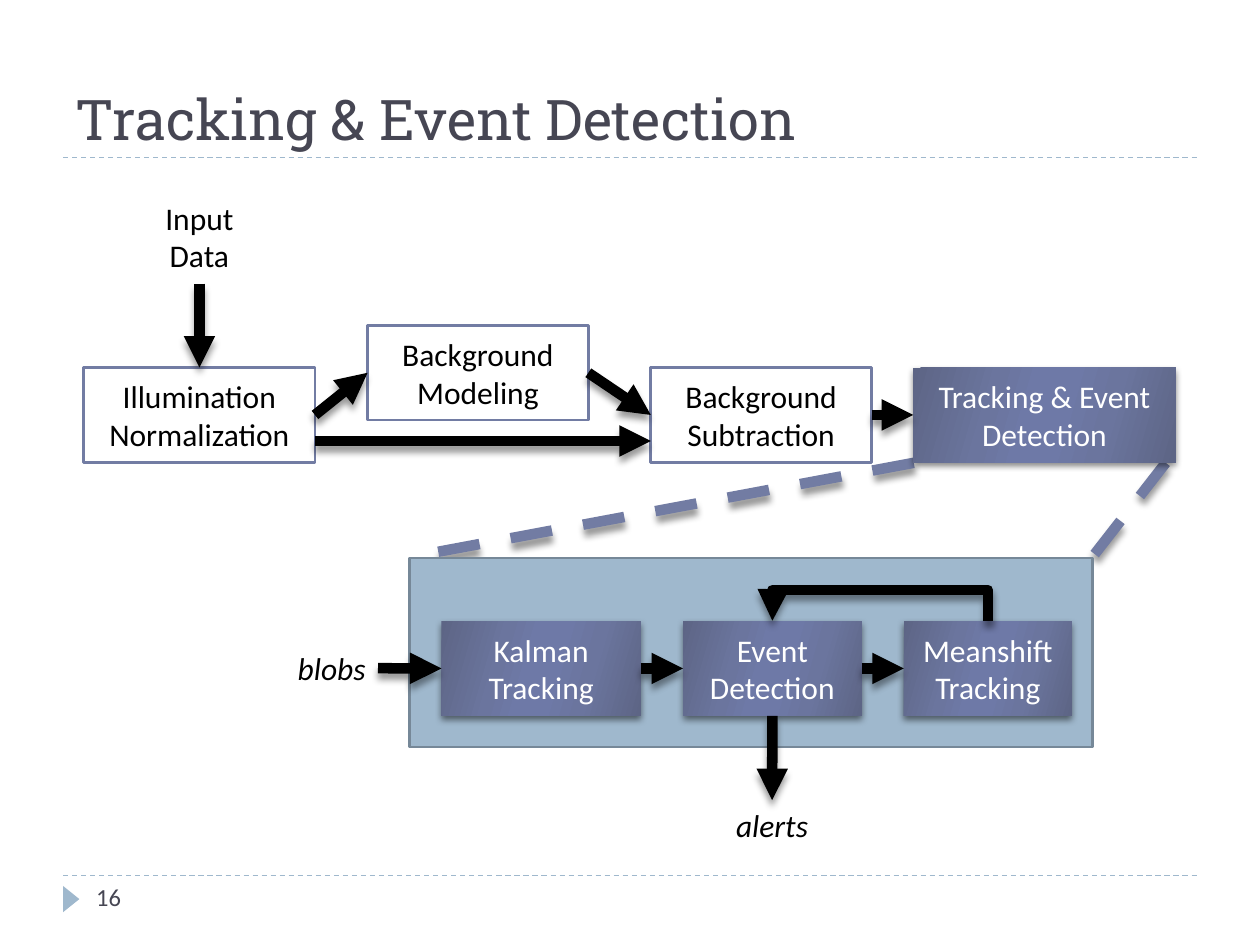
from lxml import etree
from pptx import Presentation
from pptx import util as u
from pptx.dml.color import RGBColor
from pptx.enum import dml, shapes, text
from pptx.oxml.ns import qn

BLACK = RGBColor(0x00, 0x00, 0x00)
WHITE = RGBColor(0xFF, 0xFF, 0xFF)
INK = RGBColor(0x46, 0x46, 0x53)
INDIGO = RGBColor(0x72, 0x7C, 0xA3)
PALE = RGBColor(0x9F, 0xB8, 0xCD)
PALE_EDGE = RGBColor(0x76, 0x88, 0x98)
EDGE = RGBColor(0x5D, 0x65, 0x85)
MID = RGBColor(0x6B, 0x75, 0x9E)
CORE = RGBColor(0x6E, 0x79, 0xA7)
GRADIENT = [(0, EDGE), (30, MID), (45, CORE), (55, CORE), (73, MID), (100, EDGE)]
BODY, HEADING = "Calibri", "Roboto Slab"
BOX_H, GAP = 1.91, 0.85
TOP, LEFT, BOTTOM, RIGHT = range(4)


def add_xml(parent, tag, **attrs):
    """Append a DrawingML child element with the given attributes."""
    return etree.SubElement(parent, qn(tag), {k: str(v) for k, v in attrs.items()})


def add_shadow(effects, alpha, dist):
    """Put a soft downward black shadow in an effect list."""
    shadow = add_xml(effects, "a:outerShdw", blurRad=u.Pt(4), dist=u.Pt(dist),
                     dir=5400000, rotWithShape=0)
    add_xml(add_xml(shadow, "a:srgbClr", val=BLACK), "a:alpha", val=alpha * 1000)


def write(tf, lines, color, size=18, font=BODY, align=text.PP_ALIGN.CENTER, italic=False):
    """Fill a text frame with one formatted paragraph per line."""
    for i, line in enumerate(lines):
        p = tf.paragraphs[0] if i == 0 else tf.add_paragraph()
        p.alignment = align
        r = p.add_run()
        r.text = line
        r.font.name, r.font.size, r.font.italic = font, u.Pt(size), italic
        r.font.color.rgb = color


def add_label(s, x, y, w, h, line, anchor=text.MSO_ANCHOR.TOP, color=BLACK, **style):
    """Add a wrapping text box."""
    sp = s.shapes.add_textbox(u.Cm(x), u.Cm(y), u.Cm(w), u.Cm(h))
    tf = sp.text_frame
    tf.word_wrap, tf.vertical_anchor = True, anchor
    write(tf, [line], color, **style)
    return sp


def add_rect(s, x, y, w, h, fill, edge):
    """Add a flat rectangle with a thin outline."""
    sp = s.shapes.add_shape(shapes.MSO_SHAPE.RECTANGLE, u.Cm(x), u.Cm(y), u.Cm(w), u.Cm(h))
    sp.shadow.inherit = False
    sp.fill.solid()
    sp.fill.fore_color.rgb = fill
    sp.line.color.rgb, sp.line.width = edge, u.Pt(1.5)
    return sp


def add_step(s, x, y, w, *lines, active=False):
    """Add a process box, white or highlighted with a gradient."""
    sp = add_rect(s, x, y, w, BOX_H, WHITE, INDIGO)
    if active:
        sp.line.fill.background()
        sp.fill.gradient()
        sp.fill.gradient_angle = 344
        props = sp._element.spPr
        stops = props.find(".//" + qn("a:gsLst"))
        for stop in list(stops):
            stops.remove(stop)
        for pos, color in GRADIENT:
            add_xml(add_xml(stops, "a:gs", pos=pos * 1000), "a:srgbClr", val=color)
        add_shadow(props.find(qn("a:effectLst")), 50, 2)
    tf = sp.text_frame
    tf.word_wrap = len(lines) == 1
    tf.vertical_anchor = text.MSO_ANCHOR.MIDDLE
    write(tf, lines, WHITE if active else BLACK)
    return sp


def add_line(s, x1, y1, x2, y2, color=BLACK, width=6, dash=False, head=False,
             shadow=True, kind=shapes.MSO_CONNECTOR.STRAIGHT):
    """Add a connector with optional dashes, arrowhead and shadow."""
    cxn = s.shapes.add_connector(kind, u.Cm(x1), u.Cm(y1), u.Cm(x2), u.Cm(y2))
    cxn.line.color.rgb, cxn.line.width = color, u.Pt(width)
    if dash:
        cxn.line.dash_style = dml.MSO_LINE.DASH
    props = cxn._element.spPr
    if head:
        add_xml(props.find(qn("a:ln")), "a:tailEnd", type="triangle")
    effects = add_xml(props, "a:effectLst")
    if shadow:
        add_shadow(effects, 40, 3.4)
    return cxn


def join(s, start, start_side, end, end_side, **style):
    """Add an arrow glued to the sides of two shapes."""
    cxn = add_line(s, 0, 0, 1, 1, head=True, **style)
    cxn.begin_connect(start, start_side)
    cxn.end_connect(end, end_side)
    return cxn


def add_loop(s, start, end, rise):
    """Add an elbow arrow that runs back over the tops of two shapes."""
    cxn = join(s, start, TOP, end, TOP, kind=shapes.MSO_CONNECTOR.ELBOW)
    x1, x2 = start.left + start.width // 2, end.left + end.width // 2
    span, thin = x1 - x2, u.Cm(0.01)
    cxn.left, cxn.top = (x1 + x2 - thin) // 2, start.top - span // 2
    cxn.width, cxn.height = thin, span
    props = cxn._element.spPr
    xfrm = props.find(qn("a:xfrm"))
    xfrm.attrib.pop("flipH", None)
    xfrm.set("rot", "16200000")
    xfrm.set("flipV", "1")
    adjust = round(u.Cm(rise) / thin * 100000)
    add_xml(props.find(".//" + qn("a:avLst")), "a:gd", name="adj1", fmla=f"val {adjust}")


def draw_title(s, x, y, w, h):
    """Place the title placeholder and the rule below it."""
    sp = s.shapes.title
    sp.left, sp.top, sp.width, sp.height = u.Cm(x), u.Cm(y), u.Cm(w), u.Cm(h)
    tf = sp.text_frame
    tf.vertical_anchor, tf.auto_size = text.MSO_ANCHOR.BOTTOM, text.MSO_AUTO_SIZE.NONE
    write(tf, ["Tracking & Event Detection"], INK, 32, HEADING, text.PP_ALIGN.LEFT)
    add_line(s, x, y + h, x + w, y + h, PALE, 0.75, dash=True, shadow=False)


def draw_footer(s, x, y, w):
    """Place the bottom rule, the marker and the page number."""
    add_line(s, x, y, x + w, y, PALE, 0.75, dash=True, shadow=False)
    sp = s.shapes.add_shape(shapes.MSO_SHAPE.ISOSCELES_TRIANGLE,
                            u.Cm(x - 0.1), u.Cm(y + 0.31), u.Cm(0.53), u.Cm(0.33))
    sp.rotation = 90
    sp.shadow.inherit = False
    sp.fill.solid()
    sp.fill.fore_color.rgb = PALE
    sp.line.fill.background()
    add_label(s, x + 0.42, y, 5.5, 1.02, "16", color=INK, size=14, align=text.PP_ALIGN.LEFT)


def draw_pipeline(s, x, y):
    """Place the main processing chain."""
    row = y + 3.6
    source = add_label(s, x + 0.85, y, 2.96, BOX_H, "Input Data", text.MSO_ANCHOR.MIDDLE)
    normal = add_step(s, x, row, 4.66, "Illumination", "Normalization")
    model = add_step(s, x + 5.72, y + 2.75, 4.45, "Background", "Modeling")
    subtract = add_step(s, x + 11.43, row, 4.45, "Background Subtraction")
    track = add_step(s, x + 16.72, row, 5.29, "Tracking & Event Detection", active=True)
    join(s, source, BOTTOM, normal, TOP)
    for start, end in [(normal, model), (model, subtract), (subtract, track)]:
        join(s, start, RIGHT, end, LEFT)
    add_line(s, x + 4.66, y + 5.08, x + 11.43, y + 5.08, head=True)


def draw_detail(s, x, y, w, h):
    """Place the enlarged tracking stage with its callout lines."""
    for start, end in [(10.16, 0), (15.24, w)]:
        add_line(s, x + start, y - 1.92, x + end, y - 0.02, INDIGO, dash=True)
    add_rect(s, x, y, w, h, PALE, PALE_EDGE)
    chain = [add_label(s, x - 4.87, y + 1.71, 4.23, 1.02, "blobs",
                       align=text.PP_ALIGN.RIGHT, italic=True)]
    left = x + 0.64
    for name, width in [("Kalman Tracking", 4.02), ("Event Detection", 3.6),
                        ("Meanshift Tracking", 3.39)]:
        chain.append(add_step(s, left, y + 1.27, width, name, active=True))
        left += width + GAP
    for start, end in zip(chain, chain[1:]):
        join(s, start, RIGHT, end, LEFT)
    event, meanshift = chain[2:]
    alerts = add_label(s, x + 5.72, y + 4.88, 3.17, 1.02, "alerts", italic=True)
    join(s, event, BOTTOM, alerts, TOP)
    add_loop(s, meanshift, event, 0.63)


def main():
    """Build and save the slide."""
    prs = Presentation()
    prs.slide_width, prs.slide_height = u.Cm(25.4), u.Cm(19.05)
    s = prs.slides.add_slide(prs.slide_layouts[5])
    draw_title(s, 1.27, 0.43, 22.86, 2.75)
    draw_footer(s, 1.27, 17.65, 22.86)
    draw_detail(s, 8.26, 11.25, 13.76, 3.81)
    draw_pipeline(s, 1.69, 3.81)
    prs.save("out.pptx")


if __name__ == "__main__":
    main()
